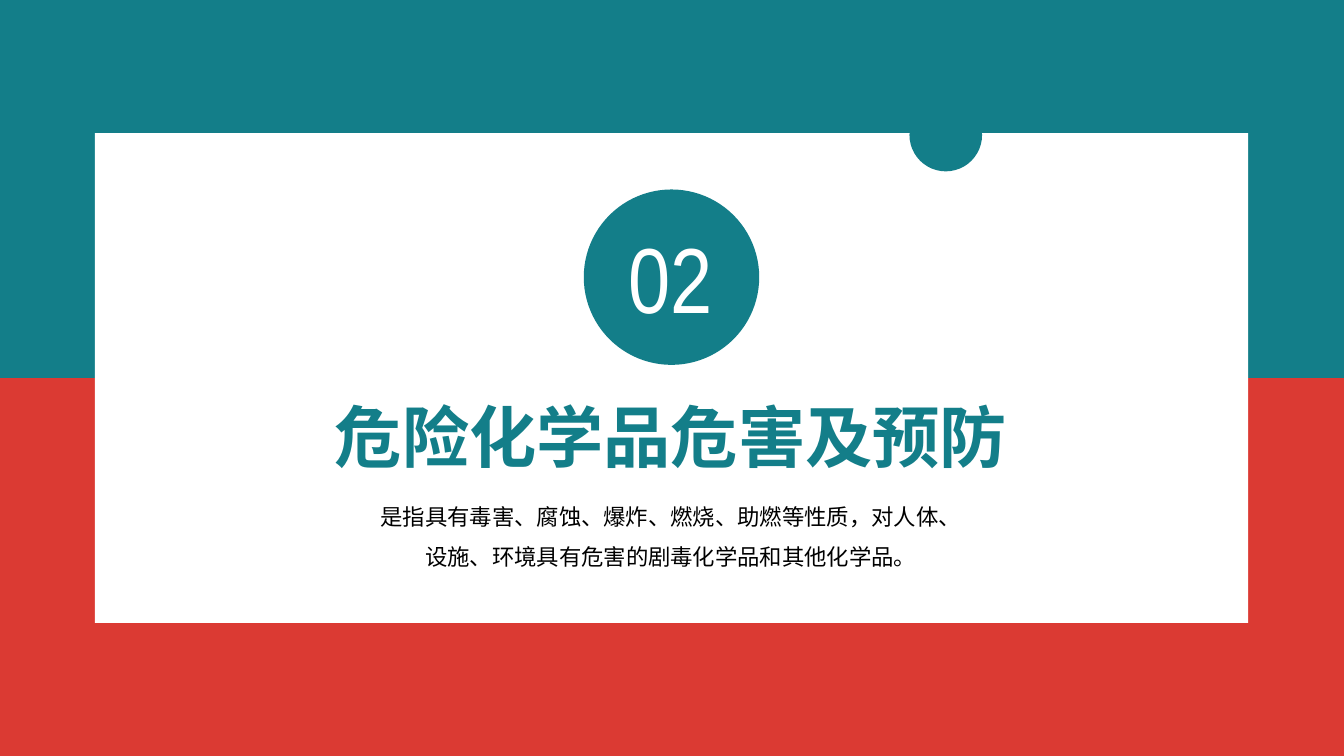
from dataclasses import dataclass

import pptx
import pptx.dml.color
import pptx.enum.shapes
import pptx.enum.text
import pptx.util

Inches = pptx.util.Inches
SHAPE = pptx.enum.shapes.MSO_SHAPE


@dataclass(frozen=True)
class Theme:
    """Colours, fonts and type sizes of the deck."""
    teal: str = "137E89"
    red: str = "DB3A33"
    white: str = "FFFFFF"
    black: str = "000000"
    font: str = "Arial"
    number_font: str = "Arial Narrow"
    number_size: int = 66
    title_size: int = 48
    body_size: int = 16


THEME = Theme()


def rgb(color):
    """Turn a hex string into a colour."""
    return pptx.dml.color.RGBColor.from_string(color)


def add_block(slide, kind, box, color):
    """Add a plain filled shape without line or shadow."""
    sp = slide.shapes.add_shape(kind, *map(Inches, box))
    sp.shadow.inherit = False
    sp.fill.solid()
    sp.fill.fore_color.rgb = rgb(color)
    sp.line.fill.background()
    return sp


def set_text(sp, text, *, size, color, font=THEME.font, bold=False, spacing=1.0):
    """Write one centred paragraph into a shape."""
    tf = sp.text_frame
    tf.word_wrap = True
    tf.auto_size = pptx.enum.text.MSO_AUTO_SIZE.NONE
    tf.vertical_anchor = pptx.enum.text.MSO_ANCHOR.TOP
    p = tf.paragraphs[0]
    p.alignment = pptx.enum.text.PP_ALIGN.CENTER
    p.line_spacing = spacing
    p.space_before = pptx.util.Pt(0)
    r = p.add_run()
    r.text = text
    r.font.name = font
    r.font.size = pptx.util.Pt(size)
    r.font.bold = bold
    r.font.color.rgb = rgb(color)


def place(slide, sp, box):
    """Move a placeholder to a box, in front of the other shapes."""
    sp.left, sp.top, sp.width, sp.height = map(Inches, box)
    slide.shapes._spTree.append(sp._element)


def add_background(slide, box):
    """Split the box into a red lower and a teal upper half."""
    x, y, w, h = box
    half = h / 2
    add_block(slide, SHAPE.RECTANGLE, (x, y + half, w, half), THEME.red)
    add_block(slide, SHAPE.RECTANGLE, (x, y, w, half), THEME.teal)


def add_card(slide, box):
    """Add the white card with a round notch in its top edge."""
    x, y, w, h = box
    card = add_block(slide, SHAPE.ROUNDED_RECTANGLE, box, THEME.white)
    card.adjustments[0] = 0
    add_block(slide, SHAPE.OVAL, (x + 8.08, y - 0.34, 0.72, 0.72), THEME.teal)


def add_badge(slide, box, number):
    """Add the section number on a teal disc."""
    x, y, w, h = box
    add_block(slide, SHAPE.OVAL, box, THEME.teal)
    label = slide.shapes.add_textbox(*map(Inches, (x + 0.22, y + 0.26, 1.28, 1.21)))
    set_text(label, number, size=THEME.number_size, color=THEME.white,
             font=THEME.number_font)


def add_heading(slide, box, title, body):
    """Place the section title and its description in the box."""
    x, y, w, h = box
    title_sp, body_sp = slide.shapes.title, slide.placeholders[1]
    place(slide, title_sp, (x, y, w, 0.91))
    set_text(title_sp, title, size=THEME.title_size, color=THEME.teal, bold=True)
    place(slide, body_sp, (x + 0.43, y + 0.94, 6.09, h - 0.94))
    set_text(body_sp, body, size=THEME.body_size, color=THEME.black, spacing=1.5)


def add_section_slide(prs, number, title, body):
    """Build a section opener."""
    slide = prs.slides.add_slide(prs.slide_layouts[2])
    add_background(slide, (0, 0, 13.33, 7.5))
    add_card(slide, (0.94, 1.32, 11.44, 4.86))
    add_badge(slide, (5.79, 1.88, 1.74, 1.74), number)
    add_heading(slide, (3.18, 3.87, 6.95, 1.8), title, body)


def main():
    """Create and save the presentation."""
    prs = pptx.Presentation()
    prs.slide_width, prs.slide_height = Inches(13.33), Inches(7.5)
    add_section_slide(
        prs, "02", "危险化学品危害及预防",
        "是指具有毒害、腐蚀、爆炸、燃烧、助燃等性质，对人体、"
        "设施、环境具有危害的剧毒化学品和其他化学品。")
    prs.save("out.pptx")


if __name__ == "__main__":
    main()
